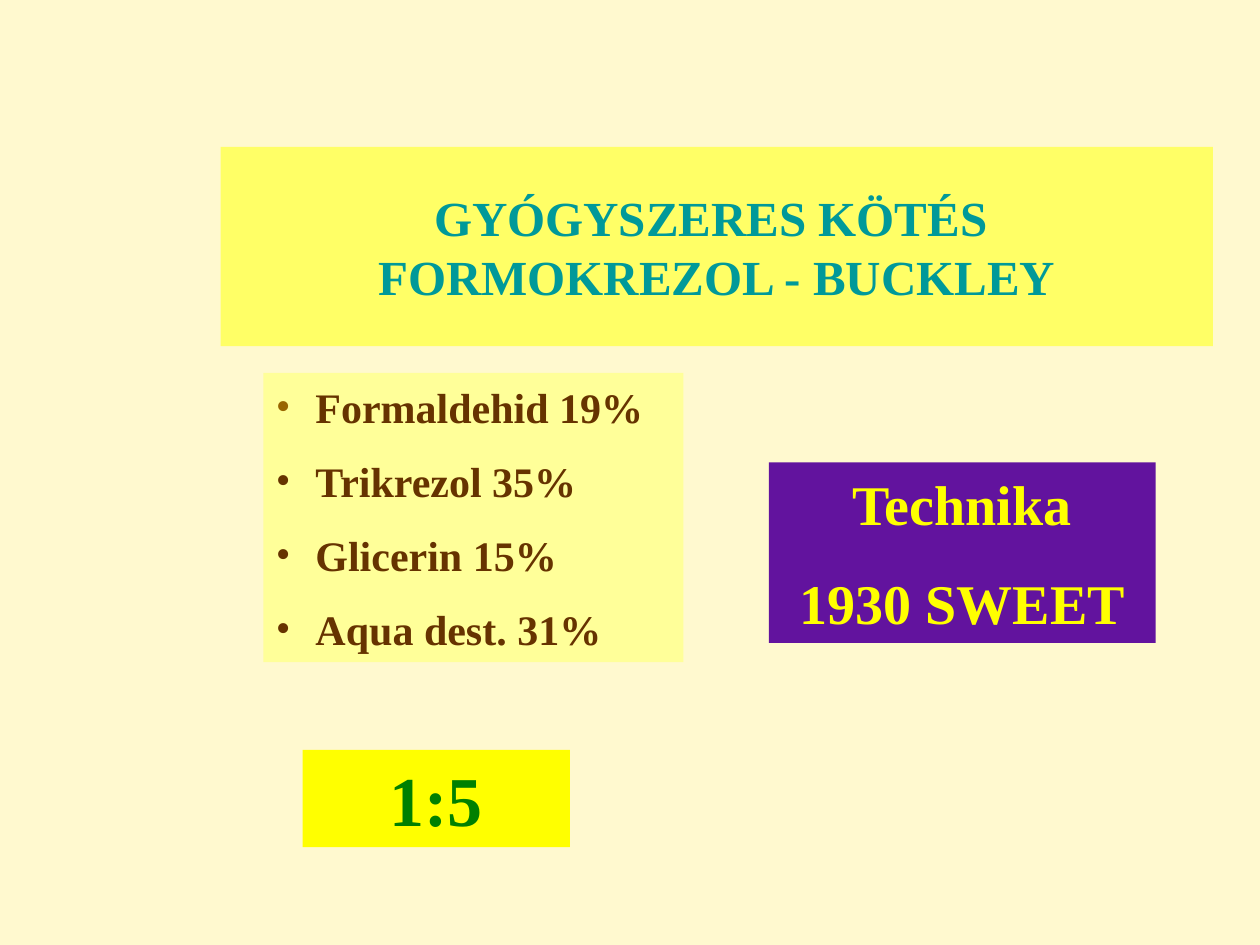
from lxml.etree import SubElement
from pptx import Presentation
from pptx.dml.color import RGBColor
from pptx.enum.shapes import MSO_SHAPE
from pptx.enum.text import MSO_ANCHOR, PP_ALIGN
from pptx.oxml.ns import qn
from pptx.util import Cm, Pt


def paint(color, value):
    color.rgb = RGBColor.from_string(value)


def panel(slide, box, fill, lines, size, ink, align=PP_ALIGN.CENTER):
    """Filled rectangle with one bold paragraph per line; returns the paragraphs."""
    shape = slide.shapes.add_shape(MSO_SHAPE.RECTANGLE, *map(Cm, box))
    shape.shadow.inherit = False
    shape.fill.solid()
    paint(shape.fill.fore_color, fill)
    shape.line.fill.background()
    frame = shape.text_frame
    frame.word_wrap = True
    frame.vertical_anchor = MSO_ANCHOR.MIDDLE
    frame.text = "\n".join(lines)
    for i, para in enumerate(frame.paragraphs):
        para.alignment = align
        if i:
            para.space_before = Pt(round(size * 0.56, 1))
        for run in para.runs:
            run.font.name = "Times New Roman"
            run.font.size = Pt(size)
            run.font.bold = True
            paint(run.font.color, ink)
    return frame.paragraphs


def bullet(para, color=None):
    props = para._p.get_or_add_pPr()
    props.set("marL", str(Cm(0.8)))
    props.set("indent", str(-Cm(0.8)))
    if color:
        SubElement(SubElement(props, qn("a:buClr")), qn("a:srgbClr"), val=color)
    SubElement(props, qn("a:buFont"), typeface="Times New Roman")
    SubElement(props, qn("a:buChar"), char="•")


def title(slide, box):
    panel(slide, box, "FFFF66", ["GYÓGYSZERES KÖTÉS \vFORMOKREZOL - BUCKLEY"],
          28, "009999")


def recipe(slide, box):
    parts = ["Formaldehid 19%", "Trikrezol 35%", "Glicerin 15%", "Aqua dest. 31%"]
    first, *rest = panel(slide, box, "FFFF99", parts, 24, "663300", PP_ALIGN.LEFT)
    bullet(first, "996600")
    for para in rest:
        bullet(para)


def ratio(slide, box):
    panel(slide, box, "FFFF00", ["1:5"], 40, "008000")


def method(slide, box):
    panel(slide, box, "62139E", ["Technika", "1930 SWEET"], 32, "FFFF00")


def main():
    deck = Presentation()
    deck.slide_width, deck.slide_height = Cm(25.4), Cm(19.05)
    slide = deck.slides.add_slide(deck.slide_layouts[6])
    slide.background.fill.solid()
    paint(slide.background.fill.fore_color, "FFF9CF")
    title(slide, (4.45, 2.96, 20, 4.02))
    recipe(slide, (5.31, 7.52, 8.47, 5.83))
    ratio(slide, (6.1, 15.12, 5.39, 1.96))
    method(slide, (15.5, 9.32, 7.8, 3.64))
    deck.save("out.pptx")


if __name__ == "__main__":
    main()
